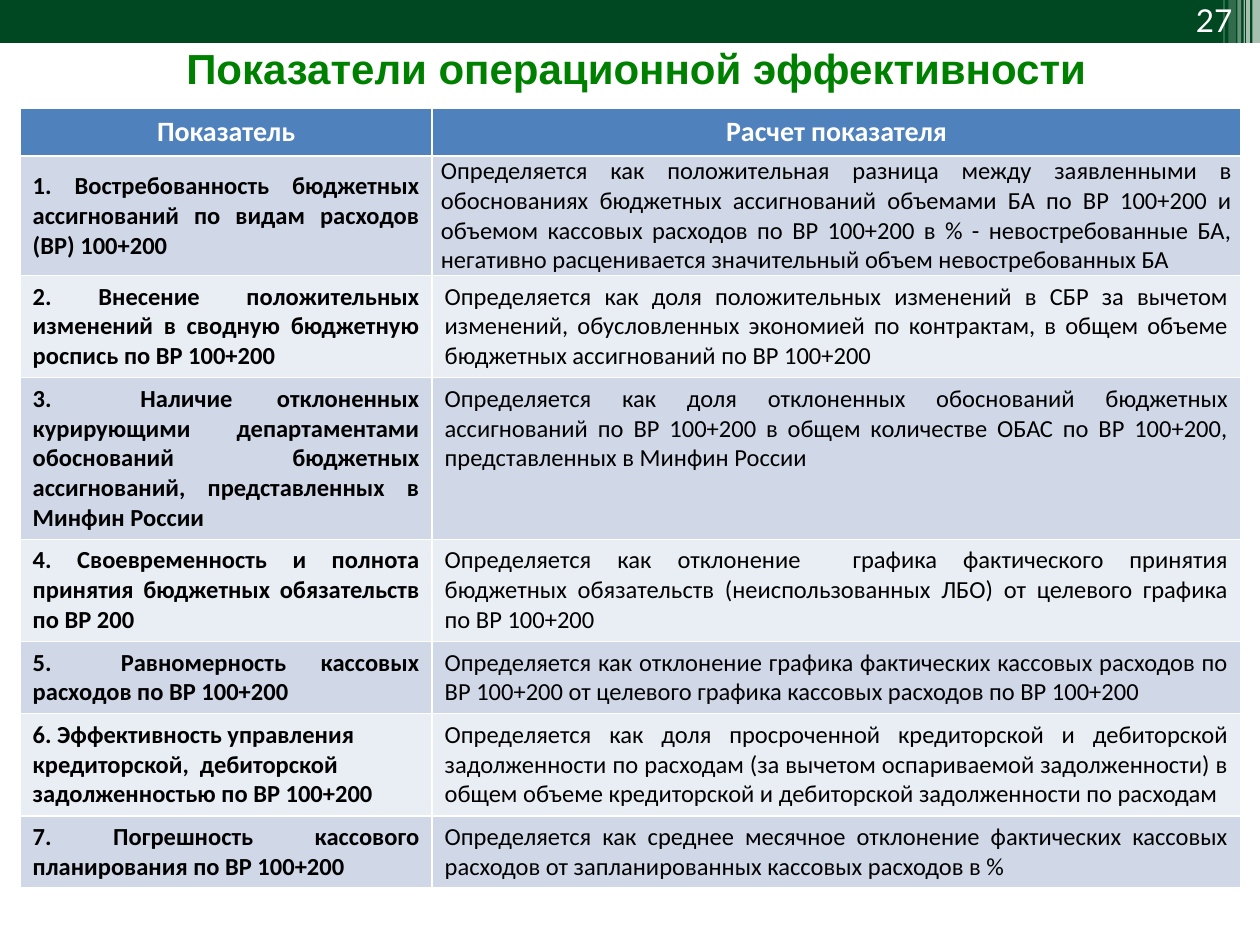
import lxml.etree
import pptx
import pptx.dml.color
import pptx.enum.shapes
import pptx.enum.text
import pptx.oxml.ns
import pptx.util

ALIGN = pptx.enum.text.PP_ALIGN
ANCHOR = pptx.enum.text.MSO_ANCHOR
COLUMNS, ROWS = 100, 75

TITLE = "Показатели операционной эффективности"
PAGE_NUMBER = "27"
HEADINGS = ("Показатель", "Расчет показателя")
INDICATORS = [
    ("1. Востребованность бюджетных ассигнований по видам расходов (ВР) 100+200",
     "Определяется как положительная разница между заявленными в обоснованиях бюджетных "
     "ассигнований объемами БА по ВР 100+200 и объемом кассовых расходов по ВР 100+200 в % - "
     "невостребованные БА, негативно расценивается значительный объем невостребованных БА"),
    ("2. Внесение положительных изменений в сводную бюджетную роспись по ВР 100+200",
     "Определяется как доля положительных изменений в СБР за вычетом изменений, обусловленных "
     "экономией по контрактам, в общем объеме бюджетных ассигнований по ВР 100+200"),
    ("3.  Наличие отклоненных курирующими департаментами обоснований бюджетных ассигнований, "
     "представленных в Минфин России",
     "Определяется как доля отклоненных обоснований бюджетных ассигнований по ВР 100+200 в общем "
     "количестве ОБАС по ВР 100+200, представленных в Минфин России"),
    ("4. Своевременность и полнота принятия бюджетных обязательств по ВР 200",
     "Определяется как отклонение  графика фактического принятия бюджетных обязательств "
     "(неиспользованных ЛБО) от целевого графика по ВР 100+200"),
    ("5.  Равномерность кассовых расходов по ВР 100+200",
     "Определяется как отклонение графика фактических кассовых расходов по ВР 100+200 от целевого "
     "графика кассовых расходов по ВР 100+200"),
    ("6. Эффективность управления кредиторской,  дебиторской задолженностью по ВР 100+200",
     "Определяется как доля просроченной кредиторской и дебиторской задолженности по расходам (за "
     "вычетом оспариваемой задолженности) в общем объеме кредиторской и дебиторской задолженности "
     "по расходам"),
    ("7. Погрешность кассового планирования по ВР 100+200",
     "Определяется как среднее месячное отклонение фактических кассовых расходов от "
     "запланированных кассовых расходов в %"),
]
COLUMN_WIDTHS = (32.7, 64.2)
ROW_HEIGHTS = (3.8, 5.7, 4.7, 6.6, 4.7, 4.7, 7.2, 5.5)
STRIPES = [(99.4, 0.6, 3.4, 65), (98.9, 0.3, 3.4, 65), (98.7, 0.1, 3.4, 60),
           (98.2, 0.3, 3.4, 40), (97.5, 0.6, 3.6, 20), (97.1, 0.1, 3.6, 30)]


def grid(*lengths):
    return [pptx.util.Inches(length / 10) for length in lengths]


def color(value):
    return pptx.dml.color.RGBColor.from_string(value)


def apply(target, values):
    for name, value in values.items():
        setattr(target, name, value)


def paint(target, value):
    target.fill.solid()
    target.fill.fore_color.rgb = color(value)


def write(frame, text, align, ink, size, font, bold=False):
    para = frame.paragraphs[0]
    if align is not None:
        para.alignment = align
    span = para.add_run()
    span.text = text
    apply(span.font, {"name": font, "size": pptx.util.Pt(size), "bold": bold})
    span.font.color.rgb = color(ink)


def add_bar(page, box, fill, opacity=100):
    bar = page.shapes.add_shape(pptx.enum.shapes.MSO_SHAPE.RECTANGLE, *grid(*box))
    bar.shadow.inherit = False
    bar.line.fill.background()
    paint(bar, fill)
    if opacity < 100:
        tint = bar.fill._xPr.find(".//" + pptx.oxml.ns.qn("a:srgbClr"))
        alpha = lxml.etree.SubElement(tint, pptx.oxml.ns.qn("a:alpha"))
        alpha.set("val", str(opacity * 1000))


def add_header(page, box):
    left, top, _, _ = box
    add_bar(page, box, "004821")
    for offset, width, height, opacity in STRIPES:
        add_bar(page, (left + offset, top, width, height), "FFFFFF", opacity)


def add_label(page, box, text, anchor, **style):
    label = page.shapes.add_textbox(*grid(*box))
    apply(label.text_frame, {"word_wrap": True, "vertical_anchor": anchor})
    write(label.text_frame, text, **style)


def add_indicators(page, box):
    table = page.shapes.add_table(len(ROW_HEIGHTS), len(COLUMN_WIDTHS), *grid(*box)).table
    for column, width in zip(table.columns, grid(*COLUMN_WIDTHS)):
        column.width = width
    for row, height in zip(table.rows, grid(*ROW_HEIGHTS)):
        row.height = height
    for y, texts in enumerate([HEADINGS, *INDICATORS]):
        for x, text in enumerate(texts):
            cell = table.cell(y, x)
            if y == 0:
                paint(cell, "4F81BD")
                write(cell.text_frame, text, ALIGN.CENTER, "FFFFFF", 16, "Calibri", True)
                continue
            paint(cell, "D0D8E8" if y % 2 else "E9EDF4")
            align = ALIGN.LEFT if (y, x) == (6, 0) else ALIGN.JUSTIFY
            write(cell.text_frame, text, align, "000000", 14, "Calibri", x == 0)
            if x == 0:
                cell.vertical_anchor = ANCHOR.MIDDLE
    side, none = grid(0.7, 0)
    apply(table.cell(1, 1), {"margin_left": side, "margin_right": side,
                             "margin_top": none, "margin_bottom": none})


def main():
    deck = pptx.Presentation()
    deck.slide_width, deck.slide_height = grid(COLUMNS, ROWS)
    page = deck.slides.add_slide(deck.slide_layouts[6])
    add_header(page, (0, 0, COLUMNS, 3.4))
    add_indicators(page, (1.6, 8.6, sum(COLUMN_WIDTHS), sum(ROW_HEIGHTS)))
    add_label(page, (6.7, 2.9, 87.6, 5), TITLE, ANCHOR.TOP,
              align=ALIGN.CENTER, ink="008000", size=24, font="Arial", bold=True)
    add_label(page, (90.5, -0.4, 8.3, 4), PAGE_NUMBER, ANCHOR.BOTTOM,
              align=ALIGN.RIGHT, ink="FFFFFF", size=18, font="Lato")
    deck.save("out.pptx")


if __name__ == "__main__":
    main()
